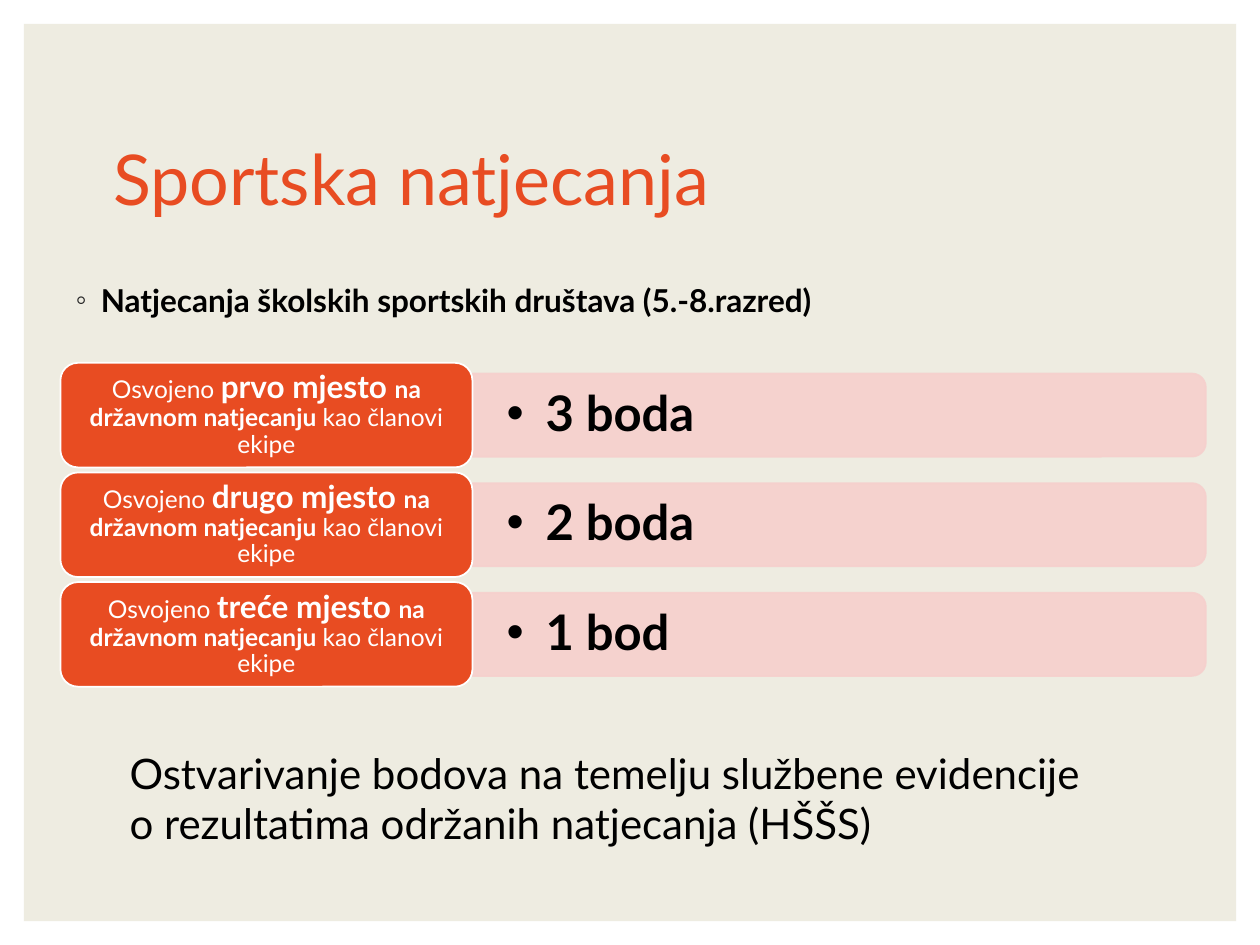
from lxml import etree
from pptx import Presentation
from pptx.dml.color import RGBColor
from pptx.enum.shapes import MSO_SHAPE as SHAPE
from pptx.enum.text import MSO_ANCHOR as ANCHOR, MSO_AUTO_SIZE as AUTO, PP_ALIGN as ALIGN
from pptx.oxml.ns import qn
from pptx.util import Inches, Pt

FONT = "Lato"
ORANGE, PINK, BEIGE = "E84C22", "F6D0CD", "EEECE1"
BLACK, WHITE, GREY = "000000", "FFFFFF", "262626"

ROWS = [("prvo mjesto ", "3 boda"), ("drugo mjesto ", "2 boda"), ("treće mjesto ", "1 bod")]
ROW_TOP, ROW_PITCH = 2.88, 0.87
LABEL_LEFT, LABEL_W, LABEL_H = 0.48, 3.27, 0.83
BAR_LEFT, BAR_W, BAR_H = LABEL_LEFT + LABEL_W, 5.82, 0.66


def rgb(color):
    return RGBColor.from_string(color)


def write(sp, *runs, size=18, color=BLACK, bold=False, align=ALIGN.LEFT,
          anchor=ANCHOR.TOP, spacing=1.0, before=0, inset=(0.1, 0.05), grow=False):
    """Write one paragraph; a run is a text or a (text, size, bold) tuple."""
    tf = sp.text_frame
    tf.word_wrap = True
    tf.auto_size = AUTO.SHAPE_TO_FIT_TEXT if grow else AUTO.NONE
    tf.vertical_anchor = anchor
    tf.margin_left = tf.margin_right = Inches(inset[0])
    tf.margin_top = tf.margin_bottom = Inches(inset[1])
    p = tf.paragraphs[0]
    p.alignment, p.line_spacing = align, spacing
    p.space_before, p.space_after = Pt(before), Pt(0)
    for run in runs:
        text, pts, heavy = (run, size, bold) if isinstance(run, str) else run
        r = p.add_run()
        r.text = text
        r.font.name, r.font.size, r.font.bold = FONT, Pt(pts), heavy
        r.font.color.rgb = rgb(color)
    return p


def bullet(p, char, indent, color):
    pPr = p._p.get_or_add_pPr()
    pPr.set("marL", str(Inches(indent)))
    pPr.set("indent", str(-Inches(indent)))
    clr = etree.SubElement(pPr, qn("a:buClr"))
    etree.SubElement(clr, qn("a:srgbClr"), val=color)
    etree.SubElement(pPr, qn("a:buFont"), typeface="Arial")
    etree.SubElement(pPr, qn("a:buChar"), char=char)


def place(sp, left, top, width, height):
    sp.left, sp.top = Inches(left), Inches(top)
    sp.width, sp.height = Inches(width), Inches(height)
    return sp


def add_box(s, kind, left, top, width, height, fill, line=None, alpha=None):
    sp = s.shapes.add_shape(kind, *map(Inches, (left, top, width, height)))
    sp.shadow.inherit = False
    sp.fill.solid()
    sp.fill.fore_color.rgb = rgb(fill)
    if line:
        sp.line.color.rgb = rgb(line)
        sp.line.width = Pt(1)
    else:
        sp.line.fill.background()
    if alpha:
        for clr in sp._element.spPr.iter(qn("a:srgbClr")):
            etree.SubElement(clr, qn("a:alpha"), val=str(alpha * 1000))
    return sp


def add_text(s, left, top, width, height, *runs, **fmt):
    sp = s.shapes.add_textbox(*map(Inches, (left, top, width, height)))
    return write(sp, *runs, **fmt)


def add_row(s, top, rank, points):
    middle = top + LABEL_H / 2
    # Points bar: an upright shape turned on its side
    bar = add_box(s, SHAPE.ROUND_2_SAME_RECTANGLE, BAR_LEFT + (BAR_W - BAR_H) / 2,
                  middle - BAR_W / 2, BAR_H, BAR_W, PINK, line=PINK, alpha=90)
    bar.rotation = 90
    p = add_text(s, BAR_LEFT, middle - 0.3, 5.79, 0.6, points, size=28, bold=True,
                 anchor=ANCHOR.MIDDLE, spacing=0.9, inset=(0.27, 0.14))
    bullet(p, "•", 0.31, BLACK)
    # Rank label
    label = add_box(s, SHAPE.ROUNDED_RECTANGLE, LABEL_LEFT, top, LABEL_W, LABEL_H,
                    ORANGE, line=WHITE)
    write(label, "Osvojeno ", (rank, 18, True), ("na državnom natjecanju ", 14, True),
          "kao članovi ekipe", size=14, color=WHITE, align=ALIGN.CENTER,
          anchor=ANCHOR.MIDDLE, spacing=0.9, inset=(0.06, 0.03))


def main():
    prs = Presentation()
    prs.slide_width, prs.slide_height = Inches(10), Inches(7.5)
    s = prs.slides.add_slide(prs.slide_layouts[1])
    title, body = s.placeholders

    # Background panel, behind the placeholders
    s.background.fill.solid()
    s.background.fill.fore_color.rgb = rgb(WHITE)
    panel = add_box(s, SHAPE.RECTANGLE, 0.19, 0.19, 9.62, 7.12, BEIGE)
    title._element.addprevious(panel._element)

    # Title and heading
    write(place(title, 0.8, 0.7, 8.4, 1.5), "Sportska natjecanja", size=40,
          color=ORANGE, anchor=ANCHOR.MIDDLE, spacing=0.9)
    p = write(place(body, 0.5, 2.18, 9.5, 5.32),
              "Natjecanja školskih sportskih društava (5.-8.razred)", bold=True, before=9)
    bullet(p, "◦", 0.2, GREY)

    # Points for each rank
    for i, (rank, points) in enumerate(ROWS):
        add_row(s, ROW_TOP + i * ROW_PITCH, rank, points)

    # Closing note
    add_text(s, 0.93, 5.88, 7.8, 0.91,
             "Ostvarivanje bodova na temelju službene evidencije o rezultatima "
             "održanih natjecanja (HŠŠS)", size=24, grow=True)

    prs.save("out.pptx")


if __name__ == "__main__":
    main()
